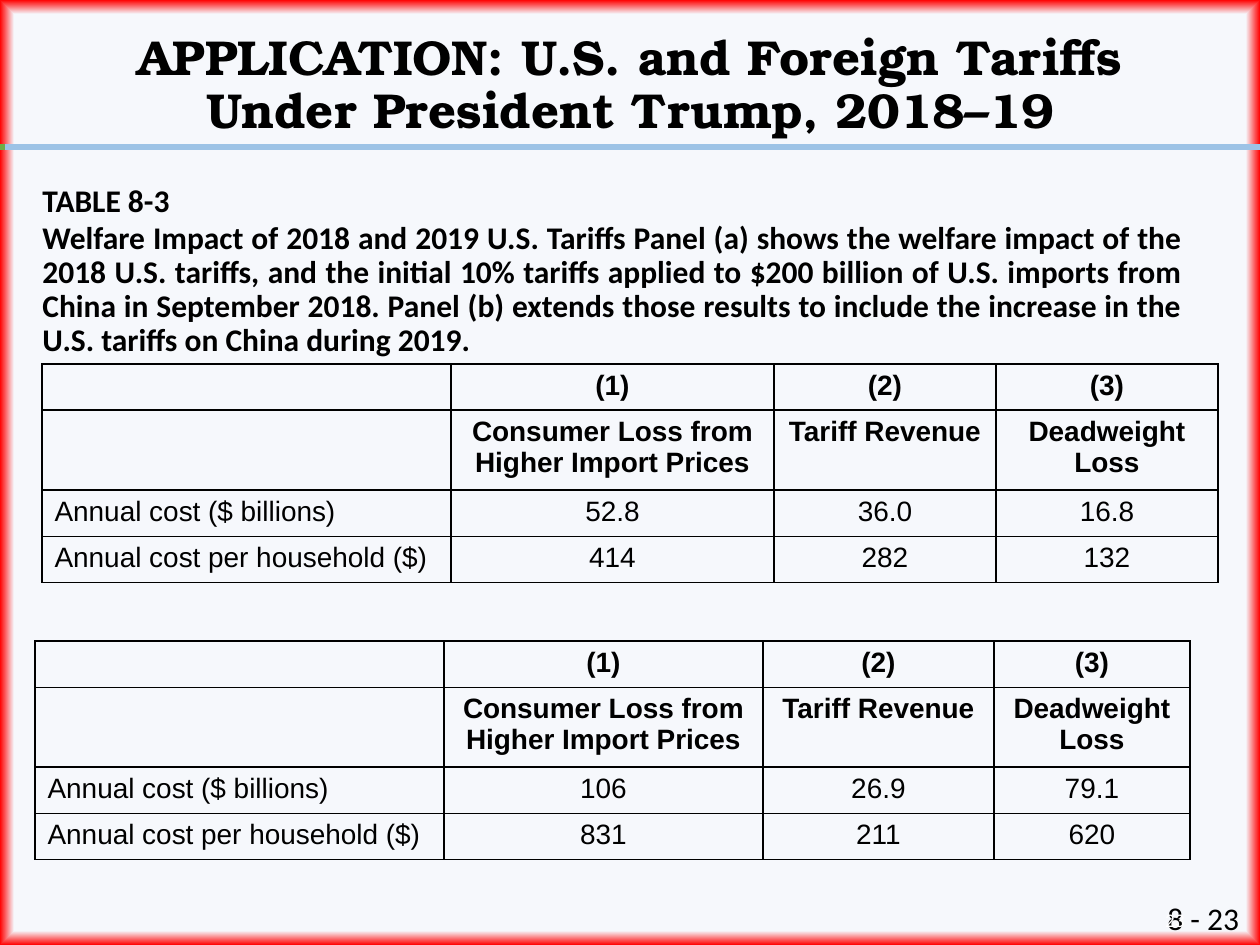
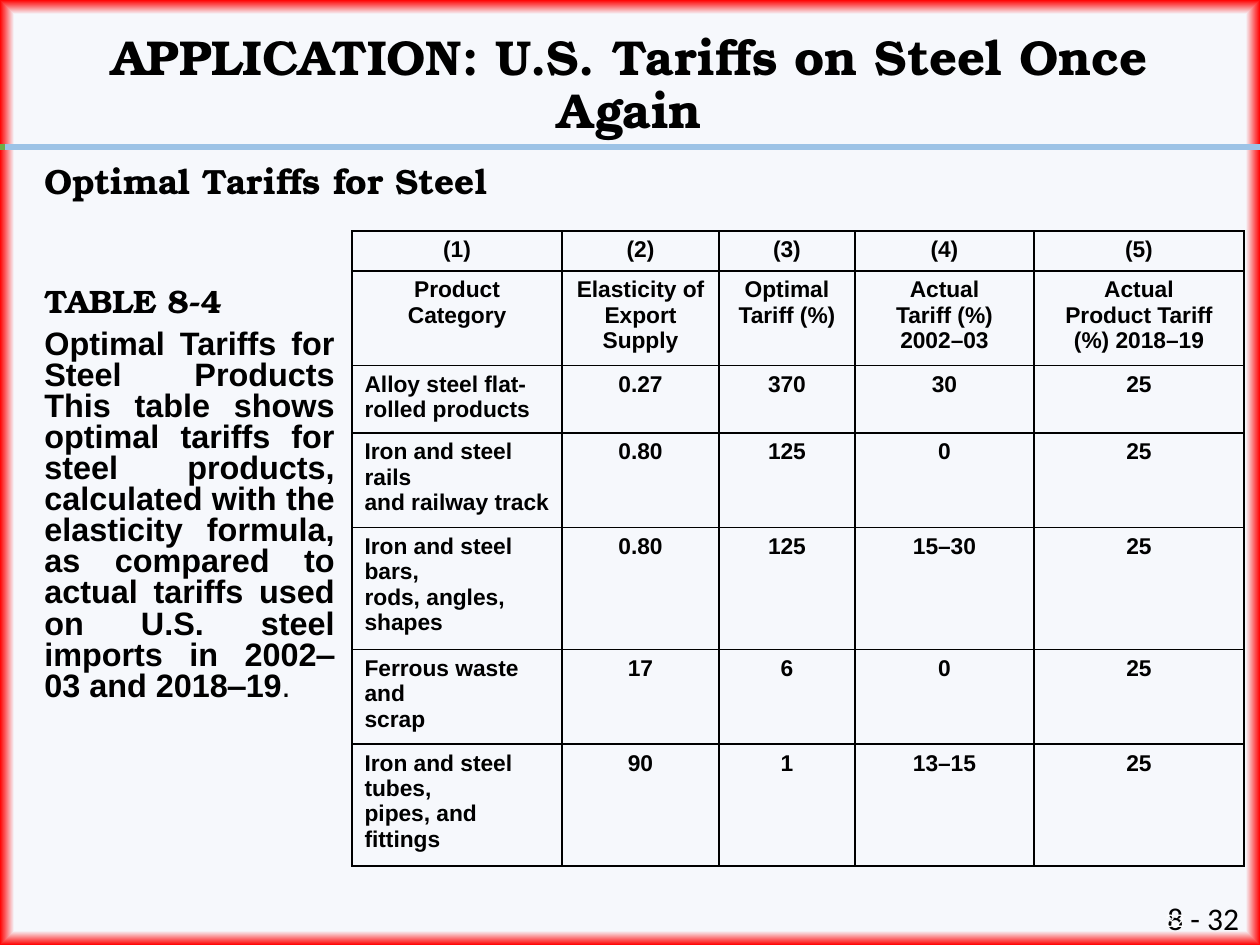
from dataclasses import dataclass

from lxml import etree
from pptx import Presentation
from pptx.dml.color import RGBColor
from pptx.enum.shapes import MSO_CONNECTOR
from pptx.enum.text import MSO_ANCHOR, PP_ALIGN
from pptx.oxml import parse_xml
from pptx.oxml.ns import nsdecls, qn
from pptx.util import Emu, Pt

LEFT, MID, RIGHT, JUST = PP_ALIGN.LEFT, PP_ALIGN.CENTER, PP_ALIGN.RIGHT, PP_ALIGN.JUSTIFY
TOP, CENTER = MSO_ANCHOR.TOP, MSO_ANCHOR.MIDDLE
LINE = MSO_CONNECTOR.STRAIGHT


@dataclass(frozen=True)
class Theme:
    """Colours, fonts and type sizes of the deck."""
    ink: str = "000000"
    white: str = "FFFFFF"
    green: str = "70AD47"
    blue: str = "9DC3E6"
    glow: tuple = ((97, "F6F8FC"), (100, "FF0000"), (100, "ABC0E4"), (100, "C7D5ED"))
    serif: str = "TeX Gyre Bonum"
    sans: str = "Arial"
    plain: str = "Calibri"
    title: float = 28
    head: float = 20
    label: float = 18.5
    body: float = 18
    cell: float = 16
    small: float = 13
    tiny: float = 11
    rule: float = 3.5
    grid: float = 1


THEME = Theme()


def px(num):
    """Turn pixels into EMU."""
    return Emu(round(num * 914400 / 126))


def style(para, face, size, bold=False, color=THEME.ink, align=LEFT):
    """Set the font and alignment of a paragraph."""
    font = para.font
    font.name, font.size, font.bold = face, Pt(size), bold
    font.color.rgb = RGBColor.from_string(color)
    para.alignment = align


def space(para, line, before=0, after=0):
    """Set the line and paragraph spacing."""
    para.line_spacing = line
    para.space_before, para.space_after = Pt(before), Pt(after)


def add_text(slide, box, lines, anchor=TOP):
    """Add a wrapped text box and return its paragraphs."""
    frame = slide.shapes.add_textbox(*map(px, box)).text_frame
    frame.word_wrap = True
    frame.vertical_anchor = anchor
    frame.text = "\n".join(lines)
    return frame.paragraphs


def add_glow(slide):
    """Fill the background with a pale field and a red rim."""
    stops = "".join(
        f'<a:gs pos="{pos * 1000}"><a:srgbClr val="{color}"/></a:gs>'
        for pos, color in THEME.glow)
    half = " ".join(f'{side}="50000"' for side in "ltrb")
    slide.element.cSld.insert(0, parse_xml(
        f'<p:bg {nsdecls("p", "a")}><p:bgPr><a:gradFill rotWithShape="1">'
        f'<a:gsLst>{stops}</a:gsLst><a:path path="shape"><a:fillToRect {half}/></a:path>'
        '</a:gradFill><a:effectLst/></p:bgPr></p:bg>'))


def add_rule(slide, left, color):
    """Draw the rule under the title."""
    rule = slide.shapes.add_connector(LINE, px(left), px(147), px(1260), px(147))
    rule.line.color.rgb = RGBColor.from_string(color)
    rule.line.width = Pt(THEME.rule)
    etree.SubElement(rule.element.spPr, qn("a:effectLst"))


def add_page(deck, title, box, num):
    """Add a slide with background, page number, rules and title."""
    slide = deck.slides.add_slide(deck.slide_layouts[6])
    add_glow(slide)
    mark, = add_text(slide, (1155, 893, 105, 50), [f"8 - {num}"])
    style(mark, THEME.plain, THEME.body)
    for left, color in ((0, THEME.green), (5, THEME.blue)):
        add_rule(slide, left, color)
    ghost, = add_text(slide, (903, 895, 294, 50), [str(num)], CENTER)
    style(ghost, THEME.plain, THEME.tiny, color=THEME.white, align=RIGHT)
    head, = add_text(slide, box, [title], CENTER)
    style(head, THEME.serif, THEME.title, True, align=MID)
    space(head, 0.9)
    return slide


def add_edges(cell):
    """Draw the four borders of a cell."""
    props = cell._tc.get_or_add_tcPr()
    for spot, side in enumerate("LRTB"):
        props.insert(spot, parse_xml(
            f'<a:ln{side} {nsdecls("a")} w="{Pt(THEME.grid)}"><a:solidFill>'
            f'<a:srgbClr val="{THEME.ink}"/></a:solidFill></a:ln{side}>'))


def add_grid(slide, spot, cols, rows, data, size, bold):
    """Add a ruled table with two centred heading rows."""
    left, top = spot
    grid = slide.shapes.add_table(
        len(rows), len(cols), px(left), px(top), px(sum(cols)), px(sum(rows))).table
    grid.first_row = grid.horz_banding = False
    for col, width in zip(grid.columns, cols):
        col.width = px(width)
    for row, high in zip(grid.rows, rows):
        row.height = px(high)
    for y, line in enumerate(data):
        for x, text in enumerate(line):
            cell = grid.cell(y, x)
            cell.fill.background()
            add_edges(cell)
            cell.text = text
            for para in cell.text_frame.paragraphs:
                style(para, THEME.sans, size, bold or y < 2,
                      align=MID if x or y < 2 else LEFT)


def add_costs(slide, spot, cols, bills, homes):
    """Add one panel of the welfare costs."""
    data = [
        ("", "(1)", "(2)", "(3)"),
        ("", "Consumer Loss from\nHigher Import Prices", "Tariff Revenue", "Deadweight\nLoss"),
        ("Annual cost ($ billions)", *bills),
        ("Annual cost per household ($)", *homes),
    ]
    add_grid(slide, spot, cols, (43, 75, 44, 44), data, THEME.cell, False)


def add_welfare(deck):
    """Build the slide on the welfare impact of the tariffs."""
    slide = add_page(
        deck, "APPLICATION: U.S. and Foreign Tariffs Under President Trump, 2018–19",
        (63, 8, 1134, 157), 23)
    label, note = add_text(slide, (30, 179, 1165, 158), [
        "TABLE 8-3",
        "Welfare Impact of 2018 and 2019 U.S. Tariffs Panel (a) shows the welfare impact "
        "of the 2018 U.S. tariffs, and the initial 10% tariffs applied to $200 billion of "
        "U.S. imports from China in September 2018. Panel (b) extends those results to "
        "include the increase in the U.S. tariffs on China during 2019."])
    for para in (label, note):
        style(para, THEME.plain, THEME.body, True, align=JUST)
    space(label, 0.9, 6.2)
    space(note, 0.9, 1.8, 1.8)
    add_costs(slide, (35, 641), (409, 319, 231, 196),
              ("106", "26.9", "79.1"), ("831", "211", "620"))
    add_costs(slide, (42, 364), (409, 323, 222, 222),
              ("52.8", "36.0", "16.8"), ("414", "282", "132"))


def add_steel(deck):
    """Build the slide on optimal steel tariffs."""
    slide = add_page(deck, "APPLICATION: U.S. Tariffs on Steel Once Again",
                     (63, 21, 1134, 131), 32)
    head, = add_text(slide, (32, 158, 766, 73), ["Optimal Tariffs for Steel"])
    style(head, THEME.serif, THEME.head, True, align=JUST)
    space(head, 0.9, 6.2)
    label, note = add_text(slide, (32, 282, 315, 525), [
        "TABLE 8-4",
        "Optimal Tariffs for Steel Products This table shows optimal tariffs for steel "
        "products, calculated with the elasticity formula, as compared to actual tariffs "
        "used on U.S. steel imports in 2002‒03 and 2018‒19"])
    for para, face in ((label, THEME.serif), (note, THEME.sans)):
        style(para, face, THEME.label, True, align=JUST)
        space(para, 0.8, 6.2)
    stop = note.add_run()
    stop.text = "."
    stop.font.bold = False
    data = [
        [f"({num})" for num in range(1, 6)],
        ("Product Category", "Elasticity of\nExport Supply", "Optimal\nTariff (%)",
         "Actual\nTariff (%) 2002–03", "Actual\nProduct Tariff (%) 2018–19"),
        ("Alloy steel flat- rolled products", "0.27", "370", "30", "25"),
        ("Iron and steel rails\nand railway track", "0.80", "125", "0", "25"),
        ("Iron and steel bars,\nrods, angles, shapes", "0.80", "125", "15–30", "25"),
        ("Ferrous waste and\nscrap", "17", "6", "0", "25"),
        ("Iron and steel tubes,\npipes, and fittings", "90", "1", "13–15", "25"),
    ]
    add_grid(slide, (352, 231), (210, 157, 136, 179, 210),
             (38, 89, 63, 89, 115, 88, 114), data, THEME.small, True)


def main():
    """Build and save the deck."""
    deck = Presentation()
    deck.slide_width, deck.slide_height = px(1260), px(945)
    add_welfare(deck)
    add_steel(deck)
    deck.save("out.pptx")


if __name__ == "__main__":
    main()
